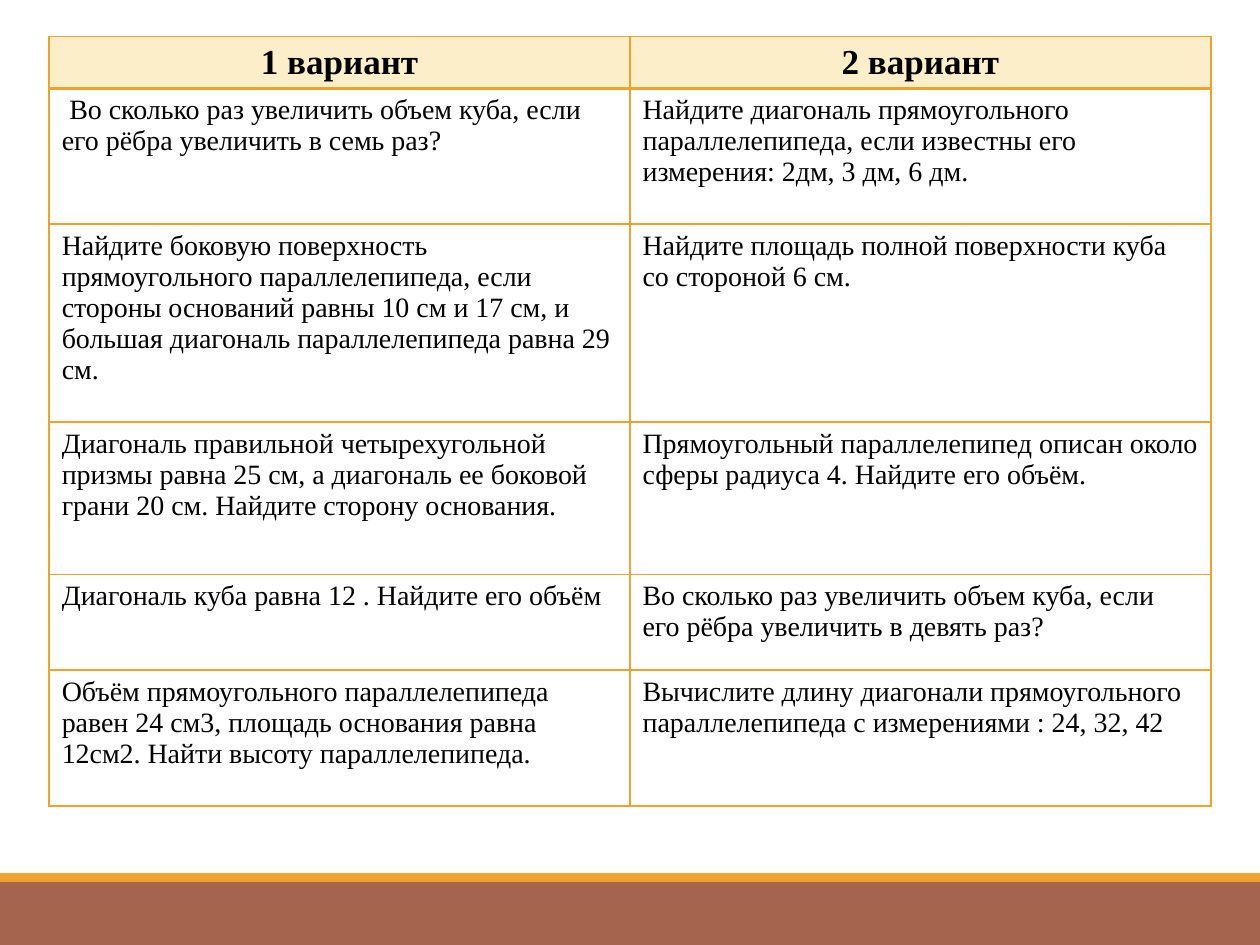
"""Build a slide with a two-variant geometry test table above a footer band."""
from lxml.etree import SubElement
from pptx import Presentation
from pptx.dml.color import RGBColor
from pptx.enum.shapes import MSO_SHAPE
from pptx.enum.text import PP_ALIGN
from pptx.oxml.ns import qn
from pptx.util import Inches, Pt

BLACK = RGBColor(0x00, 0x00, 0x00)
GOLD = RGBColor(0xF0, 0xA2, 0x2E)
CREAM = RGBColor(0xFB, 0xEE, 0xC9)
BROWN = RGBColor(0xA5, 0x64, 0x4E)

ROWS = [
    ("1 вариант", "2 вариант"),
    ("Во сколько раз увеличить объем куба, если его рёбра увеличить в семь раз?",
     "Найдите диагональ прямоугольного параллелепипеда, если известны его "
     "измерения: 2дм, 3 дм, 6 дм."),
    ("Найдите боковую поверхность прямоугольного параллелепипеда, если стороны "
     "оснований равны 10 см и 17 см, и большая диагональ параллелепипеда равна 29 см.",
     "Найдите площадь полной поверхности куба со стороной 6 см."),
    ("Диагональ правильной четырехугольной призмы равна 25 см, а диагональ ее "
     "боковой грани 20 см. Найдите сторону основания.",
     "Прямоугольный параллелепипед описан около сферы радиуса 4. Найдите его объём."),
    ("Диагональ куба равна 12 . Найдите его объём",
     "Во сколько раз увеличить объем куба, если его рёбра увеличить в девять раз?"),
    ("Объём прямоугольного параллелепипеда равен 24 см3, площадь основания равна "
     "12см2. Найти высоту параллелепипеда.",
     "Вычислите длину диагонали прямоугольного параллелепипеда с измерениями : 24, 32, 42"),
]
HEIGHTS = [0.34, 1.08, 1.57, 1.21, 0.76, 1.08]


def write(cell, text, size=16, bold=False, align=PP_ALIGN.LEFT, indent=0):
    par = cell.text_frame.paragraphs[0]
    par.alignment = align
    if indent:
        par._p.get_or_add_pPr().set("indent", str(Inches(indent)))
    run = par.add_run()
    run.text = text
    font = run.font
    font.name, font.size, font.bold = "Times New Roman", Pt(size), bold
    font.color.rgb = BLACK


def edge(cell, **widths):
    props = cell._tc.get_or_add_tcPr()
    for side, width in widths.items():
        line = SubElement(props, qn(f"a:ln{side}"), w=str(Pt(width)))
        fill = SubElement(line, qn("a:solidFill"))
        SubElement(fill, qn("a:srgbClr"), val=str(GOLD))


prs = Presentation()
prs.slide_width, prs.slide_height = Inches(10), Inches(7.5)
slide = prs.slides.add_slide(prs.slide_layouts[6])

for top, height, color in [(7, 0.5, BROWN), (6.93, 0.07, GOLD)]:
    band = slide.shapes.add_shape(
        MSO_SHAPE.RECTANGLE, 0, Inches(top), prs.slide_width, Inches(height))
    band.shadow.inherit = False
    band.fill.solid()
    band.fill.fore_color.rgb = color
    band.line.fill.background()

table = slide.shapes.add_table(
    len(ROWS), 2, Inches(0.39), Inches(0.29), Inches(9.22), Inches(sum(HEIGHTS))).table
table.first_row = table.horz_banding = False

for row, (texts, height) in enumerate(zip(ROWS, HEIGHTS)):
    table.rows[row].height = Inches(height)
    for col, text in enumerate(texts):
        cell = table.cell(row, col)
        edge(cell, L=1, R=1, T=2 if row == 1 else 1, B=2 if row == 0 else 1)
        if row == 0:
            cell.fill.solid()
            cell.fill.fore_color.rgb = CREAM
            write(cell, text, size=20, bold=True, align=PP_ALIGN.CENTER)
        else:
            cell.fill.background()
            write(cell, text, indent=0.06 if (row, col) == (1, 0) else 0)

prs.save("out.pptx")
